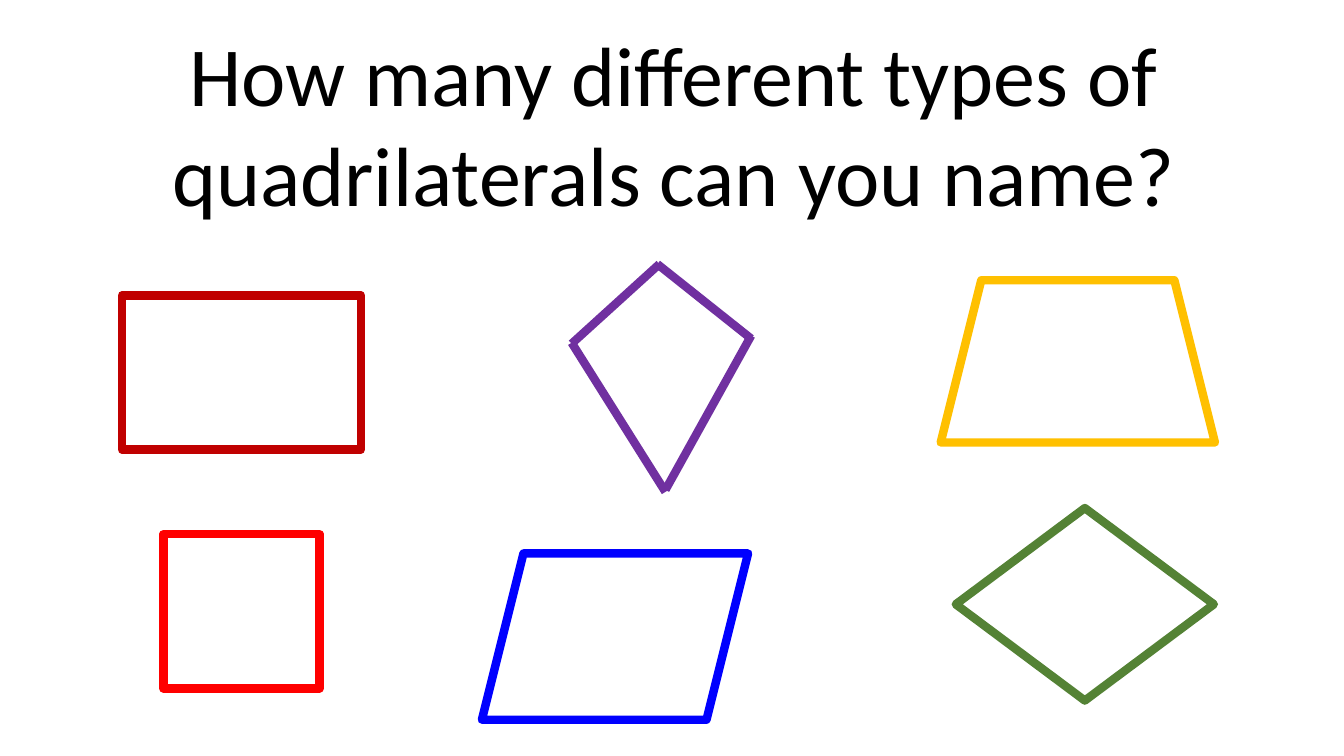
from pptx import Presentation
from pptx.dml.color import RGBColor
from pptx.enum.shapes import MSO_CONNECTOR, MSO_SHAPE as Form
from pptx.enum.text import MSO_ANCHOR, MSO_AUTO_SIZE, PP_ALIGN
from pptx.oxml.ns import qn
from pptx.util import Pt
from lxml.etree import SubElement

PX = 9144  # 100 px to the inch

SHAPES = [
    (Form.RECTANGLE, (121, 293, 237, 153), "C00000"),
    (Form.RECTANGLE, (162, 530, 155, 153), "FF0000"),
    (Form.PARALLELOGRAM, (478, 549, 264, 165), "0000FF"),
    (Form.TRAPEZOID, (933, 278, 272, 161), "FFC000"),
    (Form.FLOWCHART_DECISION, (948, 504, 256, 191), "548235"),
]
KITE = [
    (567, 341, 654, 262),
    (745, 336, 652, 262),
    (660, 488, 567, 340),
    (660, 486, 745, 333),
]


def emu(box):
    return [n * PX for n in box]


def color(code):
    return RGBColor.from_string(code)


def stroke(line, code):
    line.color.rgb = color(code)
    line.width = Pt(6)


def add_title(slide, text, box):
    title = slide.shapes.title
    title.left, title.top, title.width, title.height = emu(box)
    frame = title.text_frame
    frame.text = text
    frame.word_wrap = True
    frame.auto_size = MSO_AUTO_SIZE.NONE
    frame.vertical_anchor = MSO_ANCHOR.TOP
    para = frame.paragraphs[0]
    para.alignment = PP_ALIGN.CENTER
    para.font.name = "Calibri"
    para.font.size = Pt(60)
    para.font.color.rgb = color("000000")


def add_outline(slide, form, box, code):
    shape = slide.shapes.add_shape(form, *emu(box))
    shape.shadow.inherit = False
    shape.fill.background()
    stroke(shape.line, code)


def add_kite(slide, sides, code):
    """Draw the kite as a group of four lines."""
    group = slide.shapes.add_group_shape()
    for side in sides:
        line = group.shapes.add_connector(MSO_CONNECTOR.STRAIGHT, *emu(side))
        stroke(line.line, code)
        SubElement(line._element.spPr, qn("a:effectLst"))


def main():
    deck = Presentation()
    deck.slide_width, deck.slide_height = emu((1333, 750))
    slide = deck.slides.add_slide(deck.slide_layouts.get_by_name("Title Only"))
    add_title(slide, "How many different types of quadrilaterals can you name?",
              (109, 17, 1118, 212))
    for form, box, code in SHAPES:
        add_outline(slide, form, box, code)
    add_kite(slide, KITE, "7030A0")
    deck.save("out.pptx")


if __name__ == "__main__":
    main()
